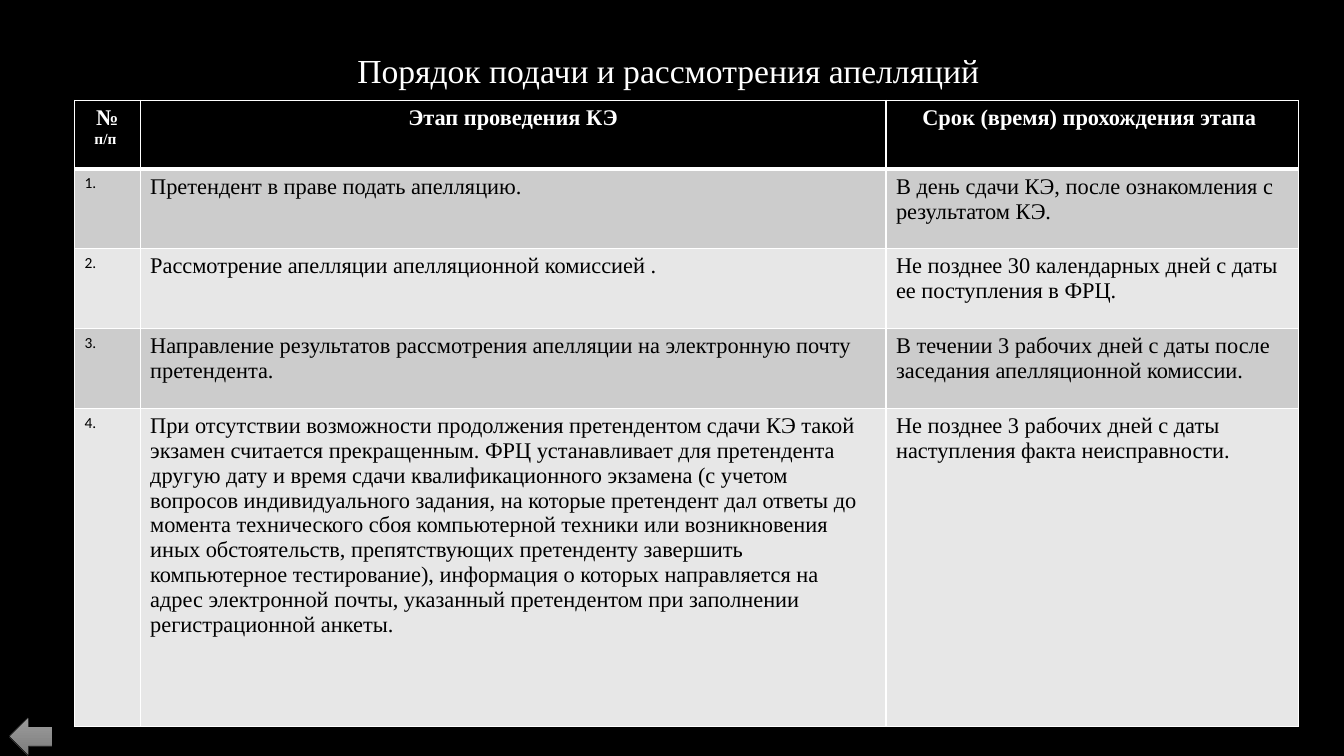
from dataclasses import dataclass

import pptx
import pptx.dml.color
import pptx.enum.shapes
import pptx.enum.text
import pptx.oxml
import pptx.oxml.ns
import pptx.util

Pt = pptx.util.Pt
Align = pptx.enum.text.PP_ALIGN


@dataclass(frozen=True)
class Theme:
    dark: str = "000000"
    light: str = "FFFFFF"
    bands: tuple = ("CCCCCC", "E7E7E7")
    arrow_top: str = "9D9D9D"
    arrow_bottom: str = "7C7C7C"
    serif: str = "Times New Roman"
    sans: str = "Calibri"
    title_size: int = 24
    body_size: int = 16
    small_size: int = 11


THEME = Theme()
COLUMN_WIDTHS = (46.8, 532.8, 294.5)
ROW_HEIGHTS = (49, 57, 57, 57, 227)
HEADINGS = ("Этап проведения КЭ", "Срок (время) прохождения этапа ")
STAGES = (
    ("Претендент в праве подать апелляцию.",
     "В день сдачи КЭ, после ознакомления с результатом КЭ."),
    ("Рассмотрение апелляции апелляционной комиссией .",
     "Не позднее 30 календарных дней с даты ее поступления в ФРЦ."),
    ("Направление результатов рассмотрения апелляции на электронную почту претендента.",
     "В течении 3 рабочих дней с даты после заседания апелляционной комиссии."),
    ("При отсутствии возможности продолжения претендентом сдачи КЭ такой экзамен "
     "считается прекращенным. ФРЦ устанавливает для претендента другую дату и время "
     "сдачи квалификационного экзамена (с учетом вопросов индивидуального задания, "
     "на которые претендент дал ответы до момента технического сбоя компьютерной "
     "техники или возникновения иных обстоятельств, препятствующих претенденту "
     "завершить компьютерное тестирование), информация о которых направляется на "
     "адрес электронной почты, указанный претендентом при заполнении "
     "регистрационной анкеты.",
     "Не позднее 3 рабочих дней с даты наступления факта неисправности."),
)


def rgb(value):
    return pptx.dml.color.RGBColor.from_string(value)


def set_font(font, name, size, color, bold=False):
    font.name = name
    font.size = Pt(size)
    font.color.rgb = rgb(color)
    font.bold = bold


def place(shape, left, top, width, height):
    shape.left, shape.top = Pt(left), Pt(top)
    shape.width, shape.height = Pt(width), Pt(height)


def add_title(page, left, top, width, height):
    title = page.shapes.title
    place(title, left, top, width, height)
    frame = title.text_frame
    frame.text = "Порядок подачи и рассмотрения апелляций"
    frame.vertical_anchor = pptx.enum.text.MSO_ANCHOR.MIDDLE
    para = frame.paragraphs[0]
    para.alignment = Align.CENTER
    para.line_spacing = 0.9
    set_font(para.font, THEME.serif, THEME.title_size, THEME.light)


def style_cell(cell, fill, top=1, bottom=1):
    """Draw the cell's borders, with widths in points, and then its fill."""
    properties = cell._tc.get_or_add_tcPr()
    for side, width in (("L", 1), ("R", 1), ("T", top), ("B", bottom)):
        properties.append(pptx.oxml.parse_xml(
            f'<a:ln{side} {pptx.oxml.ns.nsdecls("a")} w="{Pt(width)}"><a:solidFill>'
            f'<a:srgbClr val="{THEME.light}"/></a:solidFill></a:ln{side}>'))
    cell.fill.solid()
    cell.fill.fore_color.rgb = rgb(fill)


def write_cell(cell, text, name, size, color, bold=False, align=Align.LEFT):
    cell.text = text
    para = cell.text_frame.paragraphs[0]
    para.alignment = align
    set_font(para.font, name, size, color, bold)
    return para


def add_stage_table(page, left, top):
    frame = page.shapes.add_table(
        len(ROW_HEIGHTS), len(COLUMN_WIDTHS), Pt(left), Pt(top),
        Pt(sum(COLUMN_WIDTHS)), Pt(sum(ROW_HEIGHTS)))
    table = frame.table
    for column, width in zip(table.columns, COLUMN_WIDTHS):
        column.width = Pt(width)
    for row, height in zip(table.rows, ROW_HEIGHTS):
        row.height = Pt(height)

    for index, heading in enumerate(("№ ", *HEADINGS)):
        cell = table.cell(0, index)
        style_cell(cell, THEME.dark, bottom=3)
        para = write_cell(cell, heading, THEME.serif, THEME.body_size,
                          THEME.light, True, Align.CENTER)
        if index == 0:
            span = para.add_run()
            span.text = "п/п "
            span.font.size = Pt(THEME.small_size)

    for number, stage in enumerate(STAGES, 1):
        for index, text in enumerate((f"{number}.", *stage)):
            cell = table.cell(number, index)
            style_cell(cell, THEME.bands[(number - 1) % 2], top=3 if number == 1 else 1)
            name, size = ((THEME.serif, THEME.body_size) if index
                          else (THEME.sans, THEME.small_size))
            write_cell(cell, text, name, size, THEME.dark)


def add_back_arrow(page, left, top, width, height):
    arrow = page.shapes.add_shape(
        pptx.enum.shapes.MSO_SHAPE.LEFT_ARROW,
        Pt(left), Pt(top), Pt(width), Pt(height))
    arrow.shadow.inherit = False
    arrow.fill.gradient()
    arrow.fill.gradient_angle = 270
    for stop, color in zip(arrow.fill.gradient_stops,
                           (THEME.arrow_top, THEME.arrow_bottom)):
        stop.color.rgb = rgb(color)
    arrow.line.color.rgb = rgb(THEME.dark)
    arrow.line.width = Pt(0.5)


def main():
    deck = pptx.Presentation()
    deck.slide_width, deck.slide_height = Pt(960), Pt(540)
    page = deck.slides.add_slide(deck.slide_layouts.get_by_name("Title Only"))
    page.background.fill.solid()
    page.background.fill.fore_color.rgb = rgb(THEME.dark)
    add_title(page, 63.4, 0, 828, 104.4)
    add_stage_table(page, 53.3, 71.8)
    add_back_arrow(page, 6.5, 512, 31, 28)
    deck.save("out.pptx")


if __name__ == "__main__":
    main()
